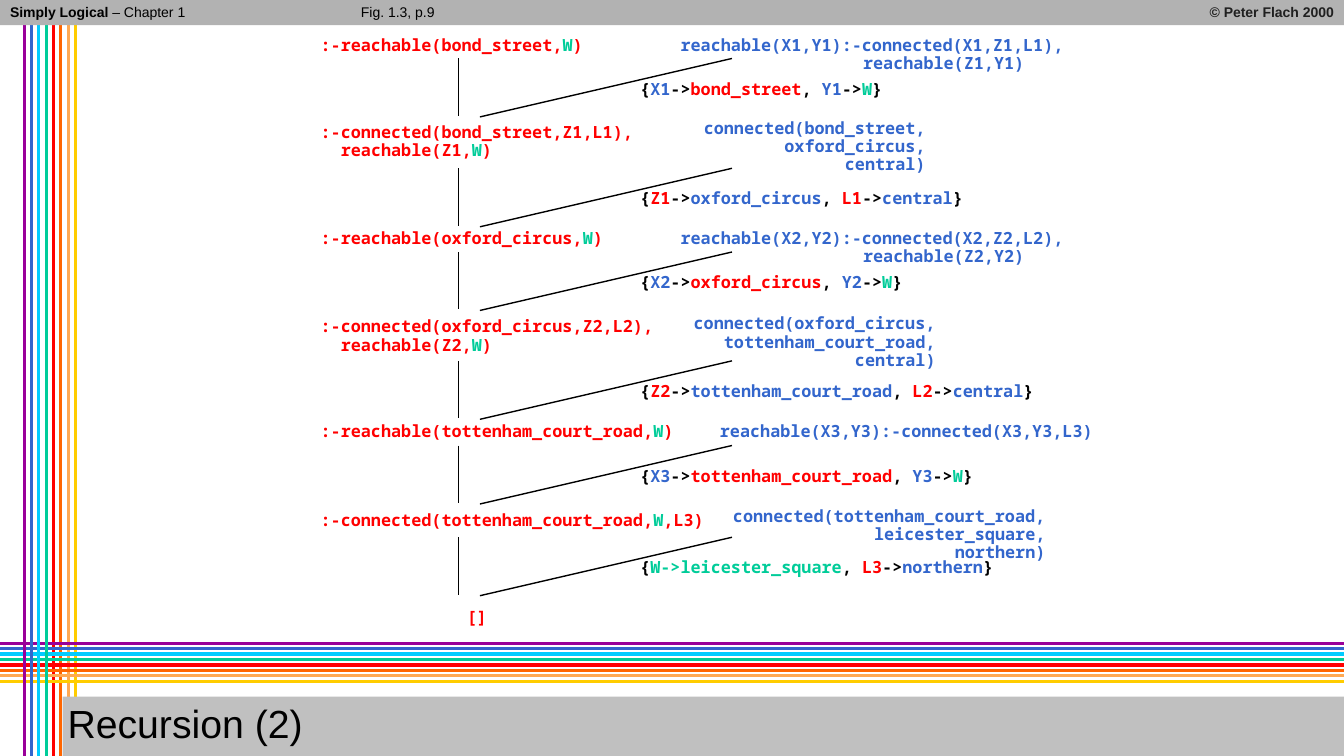
from lxml import etree
from pptx import Presentation
from pptx.dml.color import RGBColor
from pptx.enum.shapes import MSO_CONNECTOR, MSO_SHAPE
from pptx.enum.text import MSO_ANCHOR, MSO_AUTO_SIZE, PP_ALIGN
from pptx.oxml.ns import qn
from pptx.util import Inches, Pt

LEFT, RIGHT = PP_ALIGN.LEFT, PP_ALIGN.RIGHT
TOP, MIDDLE = MSO_ANCHOR.TOP, MSO_ANCHOR.MIDDLE
NO_AUTOFIT = MSO_AUTO_SIZE.NONE
STRAIGHT = MSO_CONNECTOR.STRAIGHT
RECT = MSO_SHAPE.RECTANGLE

COLORS = {
    "purple": "990099", "blue": "3366CC", "cyan": "00CCFF", "green": "00CC99",
    "red": "FF0000", "orange": "FF6600", "peach": "FFA953", "yellow": "FFCC00",
    "black": "000000", "dark": "202020", "header": "B2B2B2", "title": "C0C0C0",
}
STRIPES = ["purple", "blue", "cyan", "green", "red", "orange", "peach", "yellow"]
WIDTH, HEIGHT = 13.33, 7.5
CHAR_W, LINE_H, PAD = 0.1, 0.18, 0.11

STEPS = [
    dict(top=0.32, goal=[":-reachable(bond_street,W)"], link=0.26,
         clause=["reachable(X1,Y1):-connected(X1,Z1,L1),", "reachable(Z1,Y1)"],
         at=(3.57, 0), hang=1.81,
         bindings=[("X1", "blue", "bond_street", "red"), ("Y1", "blue", "W", "green")]),
    dict(top=1.18, goal=[":-connected(bond_street,Z1,L1),", "reachable(Z1,W)"], link=0.49,
         clause=["connected(bond_street,", "oxford_circus,", "central)"],
         at=(3.79, -0.04), align=RIGHT,
         bindings=[("Z1", "red", "oxford_circus", "blue"), ("L1", "red", "central", "blue")]),
    dict(top=2.23, goal=[":-reachable(oxford_circus,W)"], link=0.27,
         clause=["reachable(X2,Y2):-connected(X2,Z2,L2),", "reachable(Z2,Y2)"],
         at=(3.57, 0), hang=1.81,
         bindings=[("X2", "blue", "oxford_circus", "red"), ("Y2", "blue", "W", "green")]),
    dict(top=3.11, goal=[":-connected(oxford_circus,Z2,L2),", "reachable(Z2,W)"], link=0.47,
         clause=["connected(oxford_circus,", "tottenham_court_road,", "central)"],
         at=(3.69, -0.03), align=RIGHT,
         bindings=[("Z2", "red", "tottenham_court_road", "blue"),
                   ("L2", "red", "central", "blue")]),
    dict(top=4.15, goal=[":-reachable(tottenham_court_road,W)"], link=0.27,
         clause=["reachable(X3,Y3):-connected(X3,Y3,L3)"], at=(3.96, 0),
         bindings=[("X3", "blue", "tottenham_court_road", "red"),
                   ("Y3", "blue", "W", "green")]),
    dict(top=5.03, goal=[":-connected(tottenham_court_road,W,L3)"], link=0.3,
         clause=["connected(tottenham_court_road,", "leicester_square,", "northern)"],
         at=(4.08, -0.04), align=RIGHT,
         bindings=[("W", "green", "leicester_square", "green"),
                   ("L3", "red", "northern", "blue")]),
]


def rgb(name):
    return RGBColor.from_string(COLORS[name])


def write_text(tf, paragraphs, size=12, font="Noto Sans Mono", bold=True,
               align=LEFT, anchor=TOP, wrap=False, hang=0):
    tf.auto_size = NO_AUTOFIT
    tf.word_wrap = wrap
    tf.vertical_anchor = anchor
    tf.margin_left = tf.margin_right = tf.margin_top = tf.margin_bottom = Inches(0.05)
    for i, runs in enumerate(paragraphs):
        p = tf.add_paragraph() if i else tf.paragraphs[0]
        p.alignment = align
        p.line_spacing = 0.9
        if i and hang:
            pPr = p._p.get_or_add_pPr()
            pPr.set("marL", str(Inches(hang)))
            pPr.set("indent", "0")
        for text, color, *weight in runs:
            r = p.add_run()
            r.text = text
            r.font.name = font
            r.font.size = Pt(size)
            r.font.bold = weight[0] if weight else bold
            r.font.color.rgb = rgb(color)


def add_text(s, left, top, width, height, paragraphs, **fmt):
    sp = s.shapes.add_textbox(Inches(left), Inches(top), Inches(width), Inches(height))
    write_text(sp.text_frame, paragraphs, **fmt)


def add_code(s, left, top, paragraphs, **fmt):
    longest = max(sum(len(run[0]) for run in runs) for runs in paragraphs)
    add_text(s, left, top, longest * CHAR_W + PAD, len(paragraphs) * LINE_H + PAD,
             paragraphs, **fmt)


def add_line(s, x1, y1, x2, y2, color="black", width=1):
    line = s.shapes.add_connector(STRAIGHT, Inches(x1), Inches(y1), Inches(x2), Inches(y2))
    line.line.color.rgb = rgb(color)
    line.line.width = Pt(width)
    etree.SubElement(line._element.spPr, qn("a:effectLst"))


def add_stripes(s, left, top, width, height):
    def vertical(first, last):
        for i in range(first, last):
            x = left + 0.24 + 0.51 * i / 7
            add_line(s, x, top, x, top + height, STRIPES[i], 2.25)

    vertical(4, 8)
    for i, color in enumerate(STRIPES):
        y = top + 6.38 + 0.38 * i / 7
        add_line(s, left + width, y, left, y, color, 2.25)
    vertical(0, 4)


def add_header(s, left, top, width, height):
    bar = s.shapes.add_shape(RECT, Inches(left), Inches(top), Inches(width), Inches(height))
    bar.shadow.inherit = False
    bar.fill.solid()
    bar.fill.fore_color.rgb = rgb("header")
    bar.line.fill.background()
    fmt = dict(size=10, font="Arial")
    add_text(s, left + 0.05, top, 2.56, 0.27,
             [[("Simply Logical", "black"), (" – Chapter 1", "black", False)]], wrap=True, **fmt)
    add_text(s, left + width - 3.55, top, 3.5, 0.27,
             [[("© Peter Flach 2000", "dark")]], align=RIGHT, wrap=True, **fmt)
    add_text(s, left + 3.53, top, 0.84, 0.26,
             [[("Fig. 1.3, p.9", "black")]], bold=False, **fmt)


def goal_runs(line):
    before, variable, after = line.partition("W")
    return [run for run in ((before, "red"), (variable, "green"), (after, "red")) if run[0]]


def binding_runs(bindings):
    runs = [("{", "black")]
    for i, (variable, color, value, value_color) in enumerate(bindings):
        if i:
            runs.append((", ", "black"))
        arrow = "green" if variable == "W" else "black"
        runs += [(variable, color), ("->", arrow), (value, value_color)]
    return runs + [("}", "black")]


def add_step(s, left, top, step):
    dx, dy = step["at"]
    add_code(s, left, top, [goal_runs(line) for line in step["goal"]], hang=0.2)
    add_code(s, left + dx, top + dy, [[(line, "blue")] for line in step["clause"]],
             align=step.get("align", LEFT), hang=step.get("hang", 0))
    y = top + step["link"]
    add_line(s, left + 1.42, y, left + 1.42, y + 0.57)
    add_line(s, left + 1.63, y + 0.58, left + 4.13, y)
    add_code(s, left + 3.17, y + 0.17, [binding_runs(step["bindings"])])


def add_proof(s, left, top):
    for step in STEPS:
        add_step(s, left, top + step["top"], step)
    add_code(s, left + 1.45, top + 5.99, [[("[]", "red")]])


def add_title(s, left, top, width, height):
    title = s.shapes.title
    title.left, title.top = Inches(left), Inches(top)
    title.width, title.height = Inches(width), Inches(height)
    title.fill.solid()
    title.fill.fore_color.rgb = rgb("title")
    write_text(title.text_frame, [[("Recursion (2)", "black")]], size=28, font="Arial",
               bold=False, anchor=MIDDLE, wrap=True)
    s.shapes._spTree.append(title._element)


def main():
    prs = Presentation()
    prs.slide_width, prs.slide_height = Inches(WIDTH), Inches(HEIGHT)
    s = prs.slides.add_slide(prs.slide_layouts[5])
    add_stripes(s, 0, 0, WIDTH, HEIGHT)
    add_header(s, 0, 0, WIDTH, 0.25)
    add_proof(s, 3.13, 0)
    add_title(s, 0.62, 6.91, WIDTH - 0.62, 0.59)
    prs.save("out.pptx")


if __name__ == "__main__":
    main()
